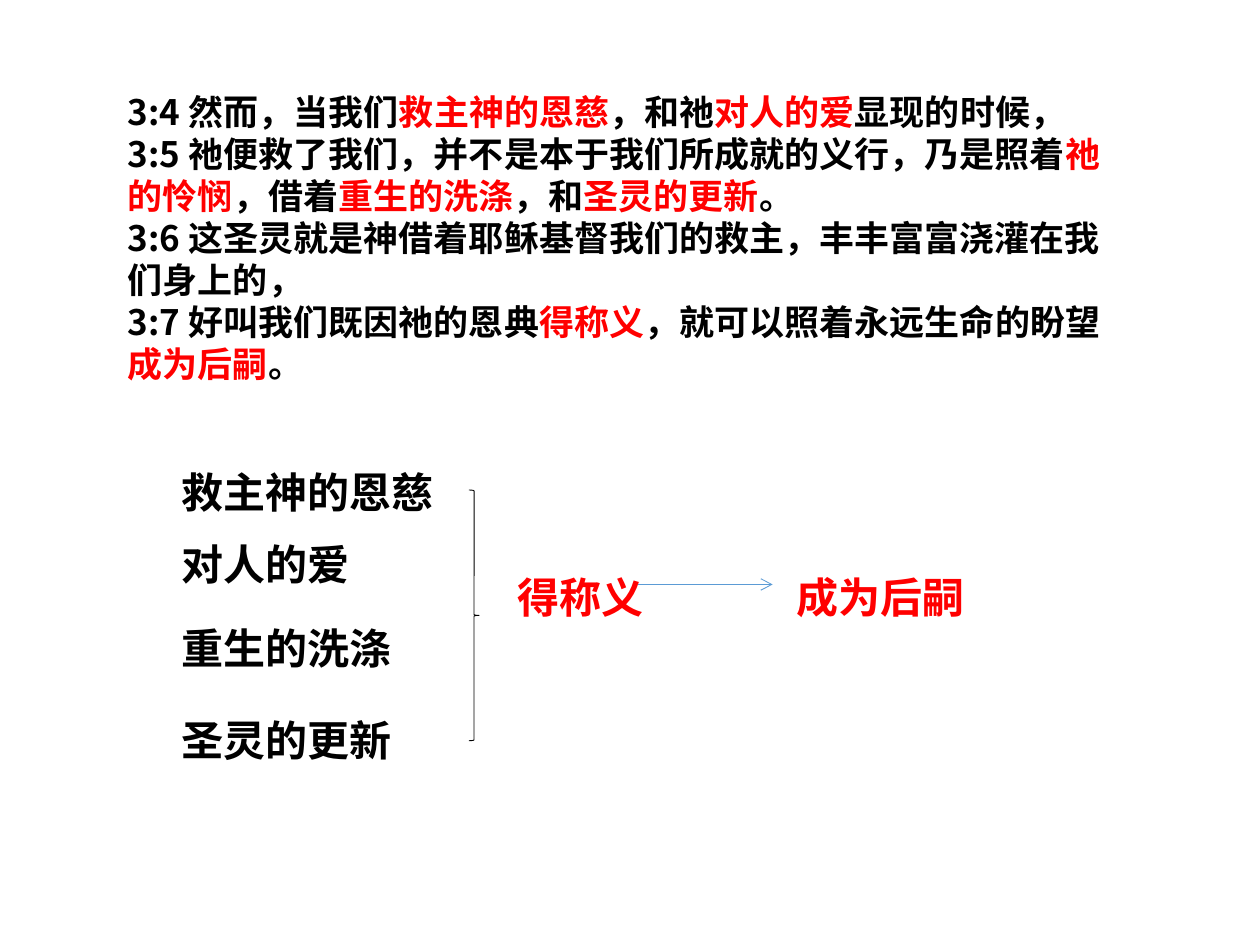
"""Build a slide of Titus 3:4-7 with its key phrases drawn as a brace diagram."""
from lxml.etree import SubElement
from pptx import Presentation
from pptx.dml.color import RGBColor
from pptx.enum.shapes import MSO_CONNECTOR as CONN, MSO_SHAPE as SHAPE
from pptx.oxml.ns import qn
from pptx.util import Pt

COLORS = {"text": "000000", "key": "FF0000", "arrow": "5B9BD5"}
CJK = "Noto Sans CJK SC"

VERSES = [
    [("3:4 然而，当我们", "text"), ("救主神的恩慈", "key"), ("，和祂", "text"),
     ("对人的爱", "key"), ("显现的时候，", "text")],
    [("3:5 祂便救了我们，并不是本于我们所成就的义行，乃是照着", "text"),
     ("祂的怜悯", "key"), ("，借着", "text"), ("重生的洗涤", "key"),
     ("，和", "text"), ("圣灵的更新", "key"), ("。", "text")],
    [("3:6 这圣灵就是神借着耶稣基督我们的救主，丰丰富富浇灌在我们身上的，", "text")],
    [("3:7 好叫我们既因祂的恩典", "text"), ("得称义", "key"),
     ("，就可以照着永远生命的盼望", "text"), ("成为后嗣", "key"), ("。", "text")],
]
LABELS = [
    ("救主神的恩慈", 96.5, 260, "text"),
    ("对人的爱", 96.5, 301.5, "text"),
    ("重生的洗涤", 96.5, 349.5, "text"),
    ("圣灵的更新", 96.5, 402, "text"),
    ("得称义", 288.5, 320, "key"),
    ("成为后嗣", 448, 320, "key"),
]

prs = Presentation()
prs.slide_width, prs.slide_height = Pt(720), Pt(540)
s = prs.slides.add_slide(prs.slide_layouts[6])


def add_text(left, top, width, height, paragraphs, size, font, wrap):
    tf = s.shapes.add_textbox(Pt(left), Pt(top), Pt(width), Pt(height)).text_frame
    tf.word_wrap = wrap
    tf.margin_top, tf.margin_bottom = Pt(6.4), Pt(0.8)
    for i, parts in enumerate(paragraphs):
        p = tf.add_paragraph() if i else tf.paragraphs[0]
        p.line_spacing = Pt(size * 1.2)
        for text, color in parts:
            r = p.add_run()
            r.text = text
            r.font.size, r.font.bold, r.font.name = Pt(size), True, font
            r.font.color.rgb = RGBColor.from_string(COLORS[color])
            SubElement(r.font._element, qn("a:ea"), typeface=CJK)


add_text(66, 45.5, 575.5, 177, VERSES, 20, CJK, True)
for text, left, top, color in LABELS:
    add_text(left, top, 24 * len(text) + 15, 36, [[(text, color)]], 24, "Calibri", False)

brace = s.shapes.add_shape(SHAPE.RIGHT_BRACE, Pt(268), Pt(280), Pt(5.8), Pt(143.3))
brace.shadow.inherit = False
brace.fill.background()
brace.line.color.rgb = RGBColor.from_string(COLORS["text"])
brace.line.width = Pt(0.5)

arrow = s.shapes.add_connector(CONN.STRAIGHT, Pt(364.5), Pt(334), Pt(441.5), Pt(334))
arrow.line.color.rgb = RGBColor.from_string(COLORS["arrow"])
arrow.line.width = Pt(0.5)
SubElement(arrow.line._get_or_add_ln(), qn("a:tailEnd"), type="arrow")
SubElement(arrow._element.spPr, qn("a:effectLst"))

prs.save("out.pptx")
